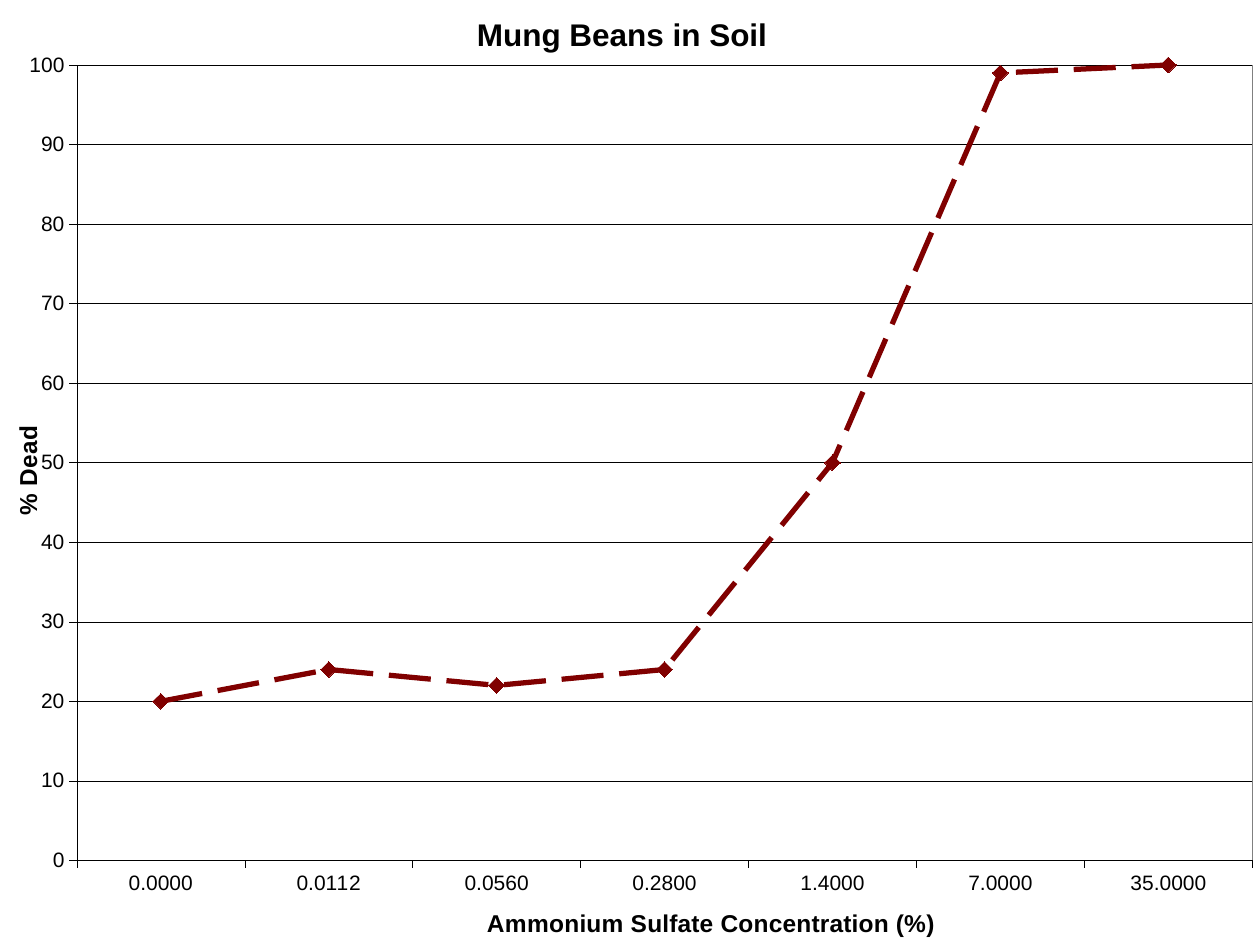
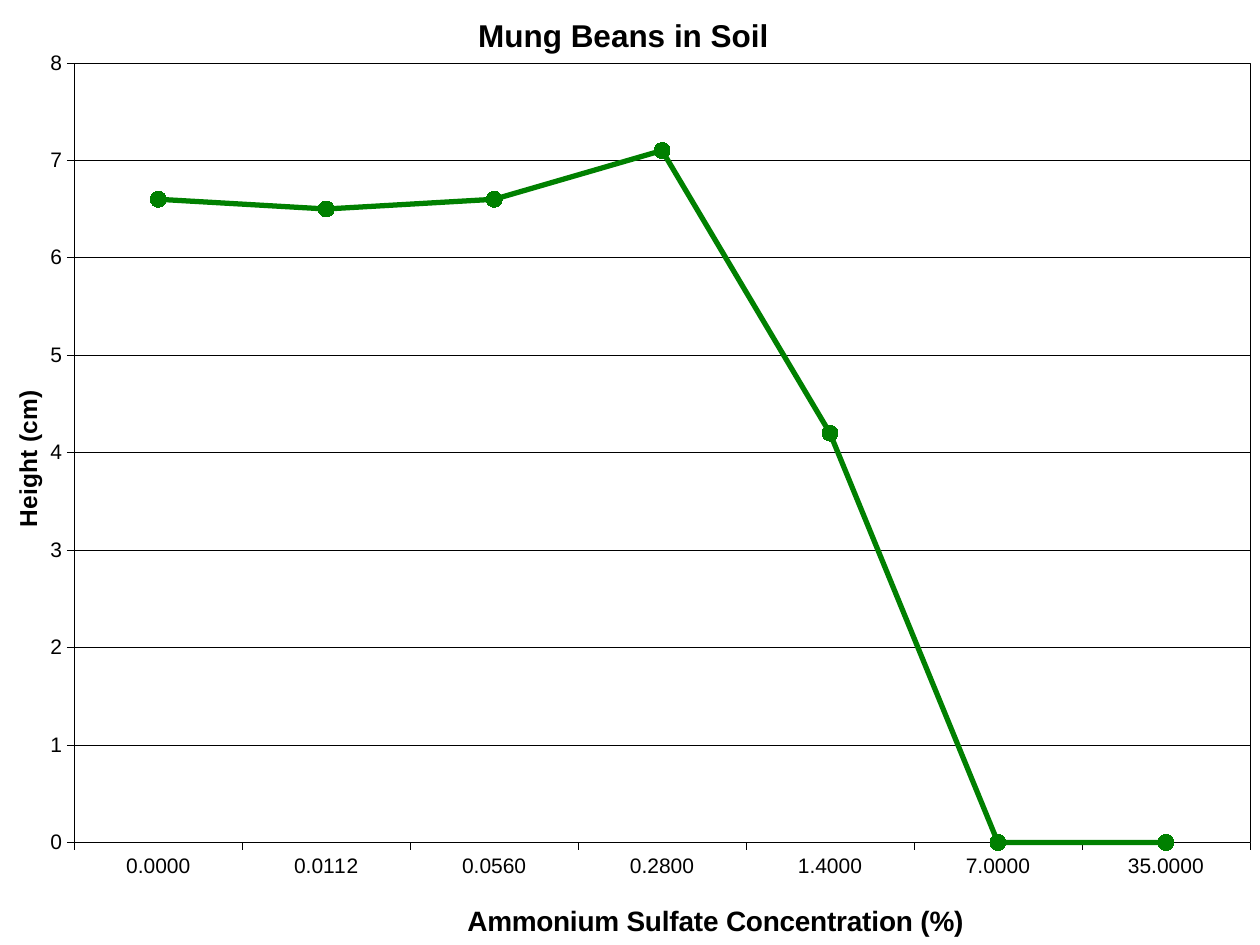
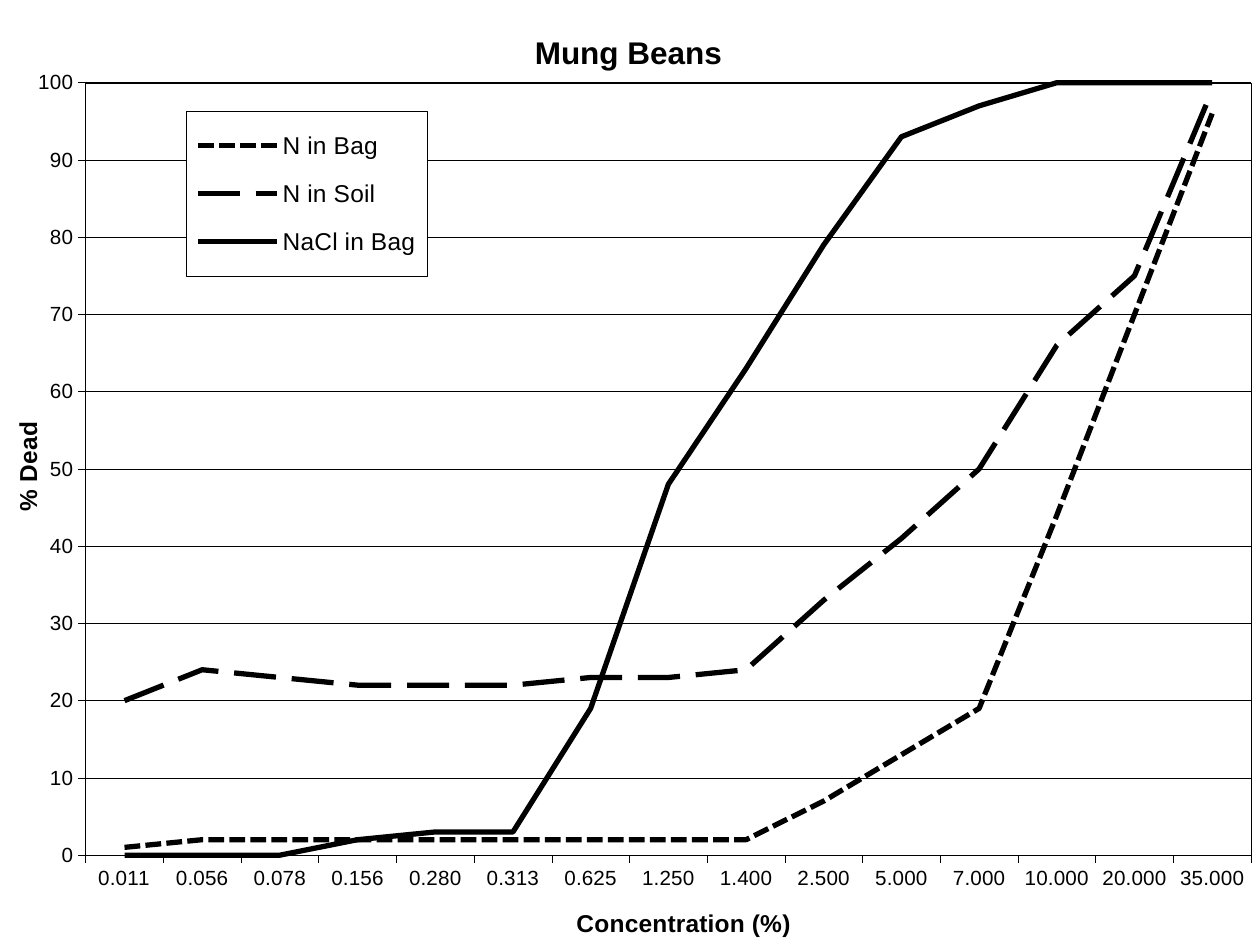
from lxml import etree
from pptx import Presentation
from pptx.chart.data import CategoryChartData
from pptx.dml.color import RGBColor
from pptx.enum.chart import XL_CHART_TYPE, XL_LEGEND_POSITION, XL_MARKER_STYLE, XL_TICK_MARK
from pptx.enum.dml import MSO_LINE
from pptx.oxml import parse_xml
from pptx.oxml.ns import nsdecls, qn
from pptx.util import Inches, Pt

BLACK = RGBColor(0x00, 0x00, 0x00)
GRAY = RGBColor(0x80, 0x80, 0x80)
MAROON = RGBColor(0x80, 0x00, 0x00)
GREEN = RGBColor(0x00, 0x80, 0x00)

LINE = XL_CHART_TYPE.LINE
LINE_MARKERS = XL_CHART_TYPE.LINE_MARKERS
DIAMOND = XL_MARKER_STYLE.DIAMOND
CIRCLE = XL_MARKER_STYLE.CIRCLE
NO_MARKER = XL_MARKER_STYLE.NONE
LONG_DASH = MSO_LINE.LONG_DASH
SHORT_DASH = MSO_LINE.SQUARE_DOT
OUTSIDE = XL_TICK_MARK.OUTSIDE
NO_TICK = XL_TICK_MARK.NONE
LEGEND_RIGHT = XL_LEGEND_POSITION.RIGHT

FONT = "Arial"
SLIDE_WIDTH, SLIDE_HEIGHT = 10, 7.5
SLIDE_BOX = (0, 0, SLIDE_WIDTH, SLIDE_HEIGHT)
HAIRLINE = Pt(0.25)
TITLE_SIZE = 18

SOIL_DOSES = ["0.0000", "0.0112", "0.0560", "0.2800", "1.4000", "7.0000", "35.0000"]
ALL_DOSES = ["0.011", "0.056", "0.078", "0.156", "0.280", "0.313", "0.625", "1.250",
             "1.400", "2.500", "5.000", "7.000", "10.000", "20.000", "35.000"]

# Each series: name, values, colour, dash, marker.
# Each title: text, size, (left, top) in inches within the chart.
SLIDES = [
    dict(kind=LINE_MARKERS, doses=SOIL_DOSES, top=100, step=10, label_size=12,
         series=[("Dead in Soil", [20, 24, 22, 24, 50, 99, 100], MAROON, LONG_DASH, DIAMOND)],
         plot=(0.61, 0.52, 9.33, 6.36), border=GRAY,
         title=("Mung Beans in Soil", TITLE_SIZE, (3.74, 0.07)),
         dose_title=("Ammonium Sulfate Concentration (%)", 14, (3.83, 7.22)),
         value_title=("% Dead", 14, (0.06, 3.37))),
    dict(kind=LINE_MARKERS, doses=SOIL_DOSES, top=8, step=1, label_size=12,
         series=[("Height in Soil", [6.6, 6.5, 6.6, 7.1, 4.2, 0, 0], GREEN, None, CIRCLE)],
         plot=(0.59, 0.5, 9.33, 6.2), border=BLACK,
         title=("Mung Beans in Soil", TITLE_SIZE, (3.75, 0.07)),
         dose_title=("Ammonium Sulfate Concentration (%)", 16, (3.67, 7.14)),
         value_title=("Height (cm)", 14, (0.06, 3.07))),
    dict(kind=LINE, doses=ALL_DOSES, top=100, step=10, label_size=11.8,
         series=[("N in Bag", [1, 2, 2, 2, 2, 2, 2, 2, 2, 7, 13, 19, 44, 70, 96],
                  BLACK, SHORT_DASH, NO_MARKER),
                 ("N in Soil", [20, 24, 23, 22, 22, 22, 23, 23, 24, 33, 41, 50, 66, 75, 99],
                  BLACK, LONG_DASH, NO_MARKER),
                 ("NaCl in Bag", [0, 0, 0, 2, 3, 3, 19, 48, 63, 79, 93, 97, 100, 100, 100],
                  BLACK, None, NO_MARKER)],
         plot=(0.68, 0.66, 9.25, 6.16), border=BLACK,
         title=("Mung Beans", TITLE_SIZE, (4.2, 0.21)),
         dose_title=("Concentration (%)", 14, (4.54, 7.2)),
         value_title=("% Dead", 14, (0.06, 3.33)),
         legend=(1.48, 0.89, 1.91, 1.31)),
]


def set_layout(part, place, index, inner=False):
    """Fix a chart part at left, top and, if given, width, height in inches."""
    for old in part.findall(qn("c:layout")):
        part.remove(old)
    layout = parse_xml(f"<c:layout {nsdecls('c')}><c:manualLayout/></c:layout>")
    manual = layout[0]
    settings = [("layoutTarget", "inner")] if inner else []
    settings += [("xMode", "edge"), ("yMode", "edge")]
    fractions = [length / whole for length, whole in zip(place, (SLIDE_WIDTH, SLIDE_HEIGHT) * 2)]
    settings += zip("xywh", fractions)
    for tag, value in settings:
        etree.SubElement(manual, qn(f"c:{tag}")).set("val", str(value))
    part.insert(index, layout)


def frame_properties(color, fill):
    return parse_xml(
        f"<c:spPr {nsdecls('c', 'a')}>{fill}<a:ln w='{HAIRLINE}'><a:solidFill>"
        f"<a:srgbClr val='{color}'/></a:solidFill></a:ln></c:spPr>")


def style_font(font, size, bold=False):
    font.name, font.size, font.bold = FONT, Pt(size), bold
    font.color.rgb = BLACK


def write_title(title, text, size, place):
    title.text_frame.text = text
    style_font(title.text_frame.paragraphs[0].runs[0].font, size, bold=True)
    set_layout(title.element, place, 1)


def style_axis(axis, label_size, title):
    axis.major_tick_mark, axis.minor_tick_mark = OUTSIDE, NO_TICK
    axis.format.line.color.rgb = BLACK
    axis.format.line.width = HAIRLINE
    style_font(axis.tick_labels.font, label_size)
    write_title(axis.axis_title, *title)


def style_value_axis(axis, top, step):
    axis.minimum_scale, axis.maximum_scale, axis.major_unit = 0, top, step
    axis.tick_labels.number_format = "0"
    axis.tick_labels.number_format_is_linked = False
    axis.has_major_gridlines = True
    axis.major_gridlines.format.line.color.rgb = BLACK
    axis.major_gridlines.format.line.width = HAIRLINE
    axis.axis_title.element.find(".//" + qn("a:bodyPr")).set("rot", "-5400000")


def style_series(series, color, dash, marker):
    series.smooth = False
    line = series.format.line
    line.color.rgb, line.width = color, Pt(3)
    if dash:
        line.dash_style = dash
    series.marker.style = marker
    if marker != NO_MARKER:
        series.marker.size = 9
        series.marker.format.fill.solid()
        series.marker.format.fill.fore_color.rgb = color
        series.marker.format.line.color.rgb = color


def add_legend(chart, place):
    chart.has_legend = True
    chart.legend.position = LEGEND_RIGHT
    chart.legend.include_in_layout = False
    style_font(chart.legend.font, 14)
    legend = chart.element.find(".//" + qn("c:legend"))
    set_layout(legend, place, 1)
    white = "<a:solidFill><a:srgbClr val='FFFFFF'/></a:solidFill>"
    legend.find(qn("c:overlay")).addnext(frame_properties(BLACK, white))


def add_bean_chart(slide, box, kind, doses, series, top, step, label_size,
                   plot, border, title, dose_title, value_title, legend=None):
    data = CategoryChartData()
    data.categories = doses
    for name, values, *_ in series:
        data.add_series(name, values)
    chart = slide.shapes.add_chart(kind, *map(Inches, box), data).chart
    style_font(chart.font, 10)

    # Titles and axes
    chart.has_title = True
    write_title(chart.chart_title, *title)
    style_axis(chart.category_axis, label_size, dose_title)
    style_axis(chart.value_axis, label_size, value_title)
    style_value_axis(chart.value_axis, top, step)

    # Curves
    chart.plots[0].vary_by_categories = False
    for curve, (_, _, *look) in zip(chart.plots[0].series, series):
        style_series(curve, *look)

    # Plot frame and legend
    plot_area = chart.element.find(".//" + qn("c:plotArea"))
    set_layout(plot_area, plot, 0, inner=True)
    plot_area.append(frame_properties(border, "<a:noFill/>"))
    chart.has_legend = False
    if legend:
        add_legend(chart, legend)


def main():
    deck = Presentation()
    deck.slide_width, deck.slide_height = Inches(SLIDE_WIDTH), Inches(SLIDE_HEIGHT)
    blank = deck.slide_layouts[6]
    for content in SLIDES:
        add_bean_chart(deck.slides.add_slide(blank), SLIDE_BOX, **content)
    deck.save("out.pptx")


if __name__ == "__main__":
    main()
